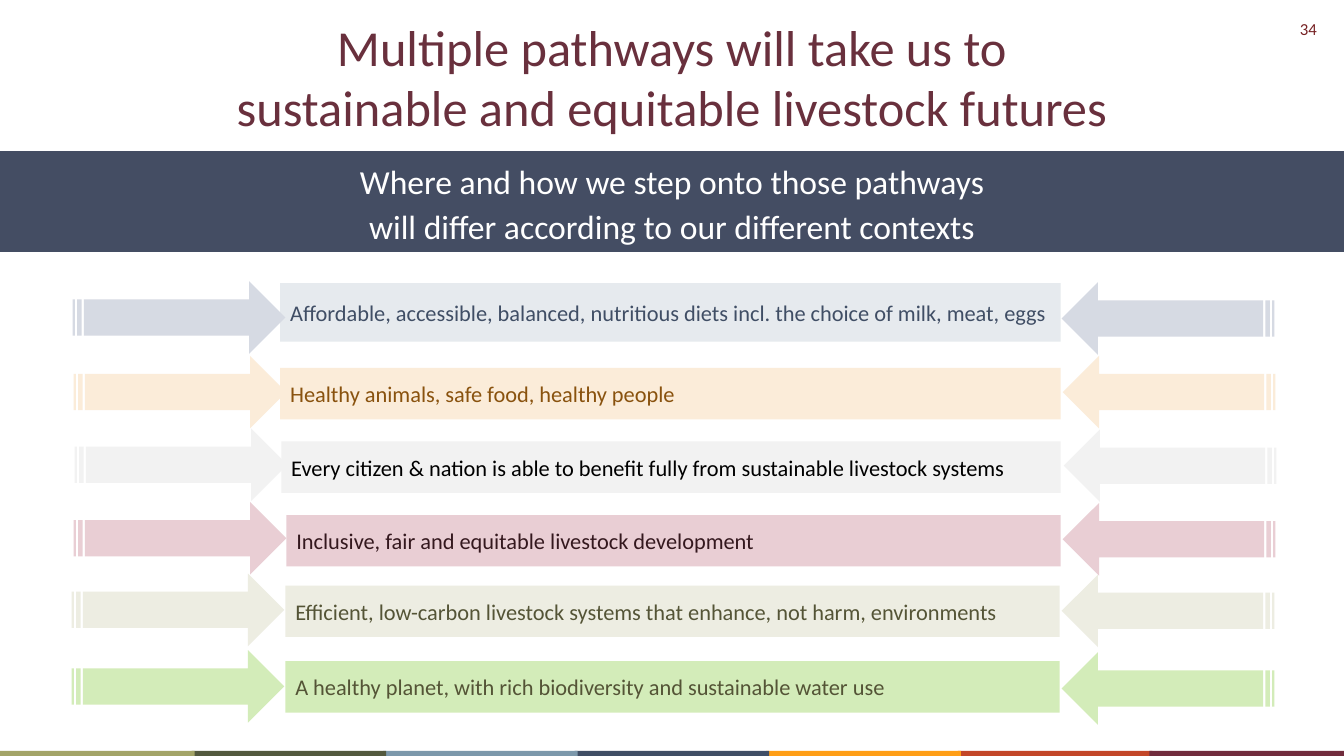
from dataclasses import dataclass

from lxml import etree
from pptx import Presentation
from pptx import util as u
from pptx.dml.color import RGBColor
from pptx.enum import shapes, text
from pptx.oxml.ns import qn


@dataclass(frozen=True)
class Theme:
    font: str = "Calibri"
    title_size: int = 36
    band_size: int = 24
    row_size: int = 16
    number_size: int = 12
    title: str = "69303D"
    number: str = "762123"
    band: str = "444D63"
    band_text: str = "FFFFFF"
    slate: str = "404E65"
    olive_text: str = "545436"
    # Footer stripe colours with their column, in drawing order
    stripes: tuple = ((5, "C34628"), (6, "712C3D"), (4, "FF9E16"), (3, "404E65"),
                      (2, "7C98AB"), (1, "53593E"), (0, "A3A467"))


THEME = Theme()


@dataclass(frozen=True)
class Pathway:
    words: str
    color: str
    fill: str
    arrow_fill: str
    box: tuple  # left, top, width, height
    left_arrow: tuple  # left, top
    right_arrow: tuple
    opacity: int = 100


PATHWAYS = [
    Pathway("Affordable, accessible, balanced, nutritious diets incl. the choice of milk, meat, eggs",
            THEME.slate, "E6EAEE", "D6DAE3", (2.78, 2.81, 7.74, 0.58), (0.72, 2.79), (10.53, 2.8)),
    Pathway("Healthy animals, safe food, healthy people",
            "89520E", "FBECD9", "FBECD9", (2.78, 3.65, 7.74, 0.51), (0.73, 3.53), (10.54, 3.53)),
    Pathway("Every citizen & nation is able to benefit fully from sustainable livestock systems",
            "000000", "F2F2F2", "F2F2F2", (2.79, 4.38, 7.73, 0.51), (0.74, 4.25), (10.55, 4.26)),
    Pathway("Inclusive, fair and equitable livestock development",
            "34181E", "E9CED4", "E9CED4", (2.84, 5.11, 7.68, 0.51), (0.73, 4.98), (10.54, 4.99)),
    Pathway("Efficient, low-carbon livestock systems that enhance, not harm, environments",
            THEME.olive_text, "EDEDE2", "EDEDE2", (2.83, 5.81, 7.68, 0.51), (0.71, 5.69), (10.53, 5.7)),
    Pathway("A healthy planet, with rich biodiversity and sustainable water use",
            THEME.olive_text, "92D050", "92D050", (2.83, 6.56, 7.68, 0.51), (0.71, 6.45), (10.53, 6.47), 40),
]
ARROW_SIZE = (2.11, 0.72)


def add_block(page, kind, place, color, opacity=100):
    """Add a filled preset shape without outline or shadow."""
    block = page.shapes.add_shape(kind, *map(u.Inches, place))
    block.shadow.inherit = False
    block.line.fill.background()
    block.fill.solid()
    block.fill.fore_color.rgb = RGBColor.from_string(color)
    if opacity < 100:
        tint = block.fill._xPr.find(qn("a:solidFill"))[0]
        etree.SubElement(tint, qn("a:alpha")).set("val", str(opacity * 1000))
    return block


def write_lines(box, lines, size, color, align, anchor=text.MSO_ANCHOR.MIDDLE):
    """Write one paragraph whose lines are parted by line breaks."""
    frame = box.text_frame
    frame.word_wrap = True
    frame.vertical_anchor = anchor
    para = frame.paragraphs[0]
    para.alignment = align
    for index, line in enumerate(lines):
        if index:
            para.add_line_break()
        span = para.add_run()
        span.text = line
        span.font.name = THEME.font
        span.font.size = u.Pt(size)
        span.font.color.rgb = RGBColor.from_string(color)
    return para


def add_title(page, lines):
    box = page.shapes.title
    box.left, box.top, box.width, box.height = map(u.Inches, (0, 0.11, 13.33, 1.31))
    box.text_frame.auto_size = text.MSO_AUTO_SIZE.SHAPE_TO_FIT_TEXT
    write_lines(box, lines, THEME.title_size, THEME.title, text.PP_ALIGN.CENTER,
                text.MSO_ANCHOR.TOP)


def add_band(page, lines):
    band = add_block(page, shapes.MSO_SHAPE.RECTANGLE, (0, 1.5, 13.33, 1), THEME.band)
    para = write_lines(band, lines, THEME.band_size, THEME.band_text,
                       text.PP_ALIGN.CENTER, text.MSO_ANCHOR.TOP)
    para.line_spacing = u.Pt(32)


def add_page_number(page, number):
    box = page.shapes.add_textbox(*map(u.Inches, (12.46, 0.14, 0.7, 0.3)))
    write_lines(box, [number], THEME.number_size, THEME.number, text.PP_ALIGN.RIGHT,
                text.MSO_ANCHOR.TOP)


def add_footer(page):
    for column, color in THEME.stripes:
        add_block(page, shapes.MSO_SHAPE.RECTANGLE, (1.9 * column, 7.45, 1.93, 0.05), color)


def add_label(page, pathway):
    box = add_block(page, shapes.MSO_SHAPE.RECTANGLE, pathway.box, pathway.fill, pathway.opacity)
    write_lines(box, [pathway.words], THEME.row_size, pathway.color, text.PP_ALIGN.LEFT)


def add_arrows(page, pathway):
    """Add the pair of striped arrows that point at a label."""
    for corner in (pathway.left_arrow, pathway.right_arrow):
        arrow = add_block(page, shapes.MSO_SHAPE.STRIPED_RIGHT_ARROW, corner + ARROW_SIZE,
                          pathway.arrow_fill, pathway.opacity)
        if corner is pathway.right_arrow:
            arrow._element.spPr.find(qn("a:xfrm")).set("flipH", "1")


def main():
    deck = Presentation()
    deck.slide_width, deck.slide_height = u.Inches(13.33), u.Inches(7.5)
    page = deck.slides.add_slide(deck.slide_layouts[5])

    # Page furniture
    add_page_number(page, "34")
    add_footer(page)

    # Pathways, with the arrows in front of the labels
    for pathway in PATHWAYS:
        add_label(page, pathway)
    for pathway in PATHWAYS:
        add_arrows(page, pathway)

    # Heading
    add_title(page, ["Multiple pathways will take us to",
                     "sustainable and equitable livestock futures"])
    add_band(page, ["Where and how we step onto those pathways",
                    "will differ according to our different contexts"])

    deck.save("out.pptx")


if __name__ == "__main__":
    main()
